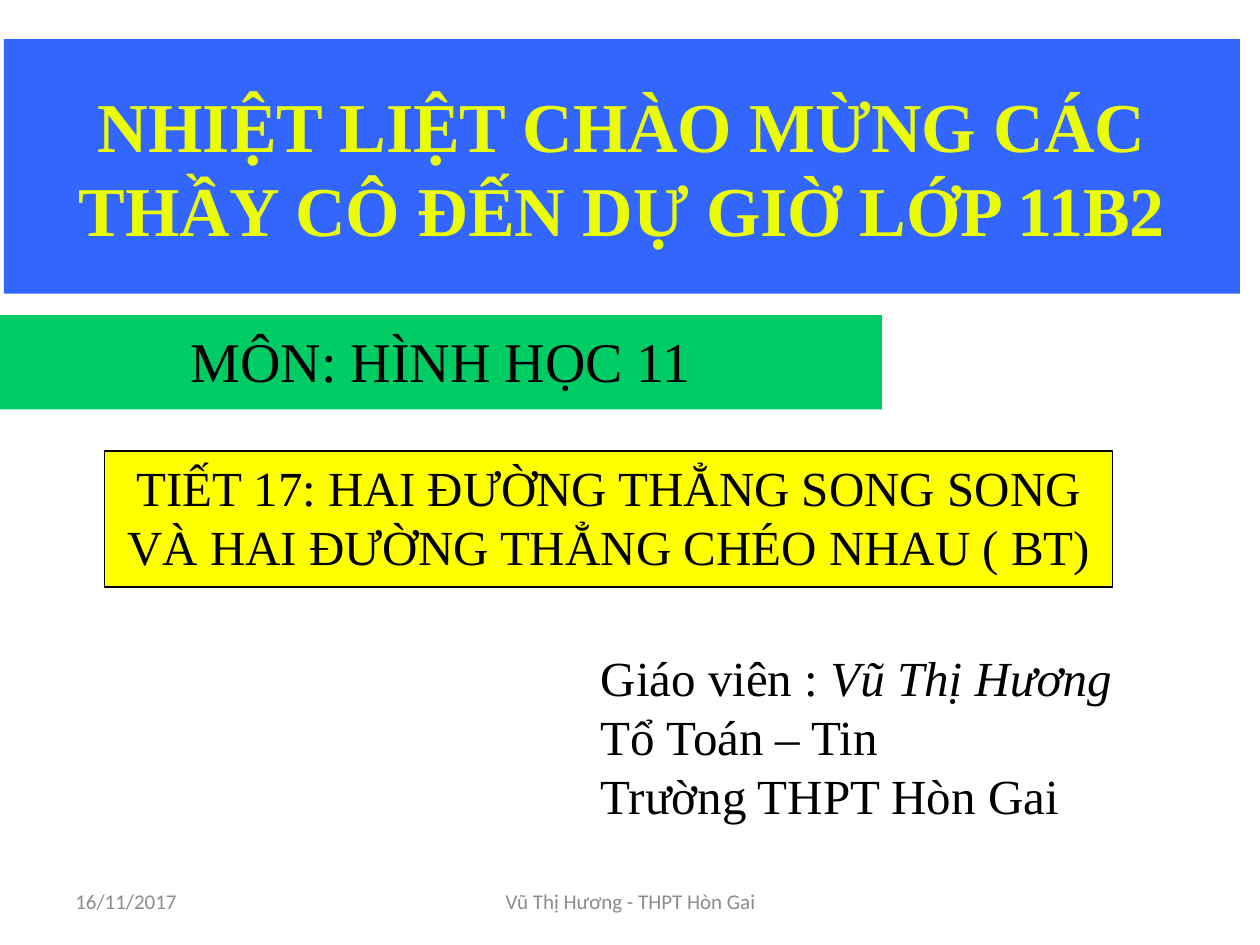
import pptx
import pptx.util
import pptx.dml.color
import pptx.enum.shapes
import pptx.enum.text

Inches = pptx.util.Inches
Pt = pptx.util.Pt
ALIGN = pptx.enum.text.PP_ALIGN
ANCHOR = pptx.enum.text.MSO_ANCHOR

COLORS = {
    "blue": "3366FF",
    "green": "00CC66",
    "yellow": "FFFF00",
    "title": "EBFC08",
    "black": "000000",
    "gray": "8C8C8C",
}


def rgb(name):
    return pptx.dml.color.RGBColor.from_string(COLORS[name])


class Deck:
    serif = "Times New Roman"
    sans = "Calibri"

    def __init__(self, width, height):
        self.prs = pptx.Presentation()
        self.prs.slide_width = Inches(width)
        self.prs.slide_height = Inches(height)
        self.s = self.prs.slides.add_slide(self.prs.slide_layouts[6])

    def style(self, p, size, color="black", font=None, bold=False, align=ALIGN.LEFT):
        p.alignment = align
        p.font.size = Pt(size)
        p.font.name = font or self.serif
        p.font.bold = bold
        p.font.color.rgb = rgb(color)

    def banner(self, box, text, fill, size, color="black", bold=False,
               anchor=ANCHOR.TOP, top=0.05, line=None):
        sp = self.s.shapes.add_shape(
            pptx.enum.shapes.MSO_SHAPE.RECTANGLE, *map(Inches, box))
        sp.shadow.inherit = False
        sp.fill.solid()
        sp.fill.fore_color.rgb = rgb(fill)
        if line:
            sp.line.color.rgb = rgb(line)
            sp.line.width = Pt(0.75)
        else:
            sp.line.fill.background()
        tf = sp.text_frame
        tf.word_wrap = True
        tf.vertical_anchor = anchor
        tf.margin_top = Inches(top)
        p = tf.paragraphs[0]
        p.text = text
        self.style(p, size, color, bold=bold, align=ALIGN.CENTER)

    def text_box(self, box):
        return self.s.shapes.add_textbox(*map(Inches, box)).text_frame

    def teacher(self, box, label, name, lines):
        tf = self.text_box(box)
        tf.word_wrap = False
        tf.auto_size = pptx.enum.text.MSO_AUTO_SIZE.SHAPE_TO_FIT_TEXT
        p = tf.paragraphs[0]
        p.add_run().text = label
        r = p.add_run()
        r.text = name
        r.font.italic = True
        tf.add_paragraph().text = "\v".join(lines)
        for p in tf.paragraphs:
            self.style(p, 28)

    def footer(self, left, width, text, align=ALIGN.LEFT):
        tf = self.text_box((left, 6.95, width, 0.4))
        tf.word_wrap = True
        tf.vertical_anchor = ANCHOR.MIDDLE
        p = tf.paragraphs[0]
        p.text = text
        self.style(p, 12, "gray", self.sans, align=align)


def main():
    deck = Deck(10, 7.5)
    deck.banner((0.03, 0.31, 9.81, 2.02),
                "NHIỆT LIỆT CHÀO MỪNG CÁC THẦY CÔ ĐẾN DỰ GIỜ LỚP 11B2",
                "blue", 40, "title", bold=True, anchor=ANCHOR.MIDDLE)
    deck.banner((0, 2.5, 7, 0.75), "MÔN: HÌNH HỌC 11", "green", 32, top=0.09)
    deck.banner((0.83, 3.58, 8, 1.08),
                "TIẾT 17: HAI ĐƯỜNG THẲNG SONG SONG VÀ HAI ĐƯỜNG THẲNG CHÉO NHAU ( BT)",
                "yellow", 28, line="black")
    deck.teacher((4.67, 5.09, 4.35, 1.51), "Giáo viên : ", "Vũ Thị Hương",
                 ["Tổ Toán – Tin ", "Trường THPT Hòn Gai"])
    deck.footer(0.5, 2.33, "16/11/2017")
    deck.footer(3.42, 3.17, "Vũ Thị Hương - THPT Hòn Gai", ALIGN.CENTER)
    deck.prs.save("out.pptx")


if __name__ == "__main__":
    main()
